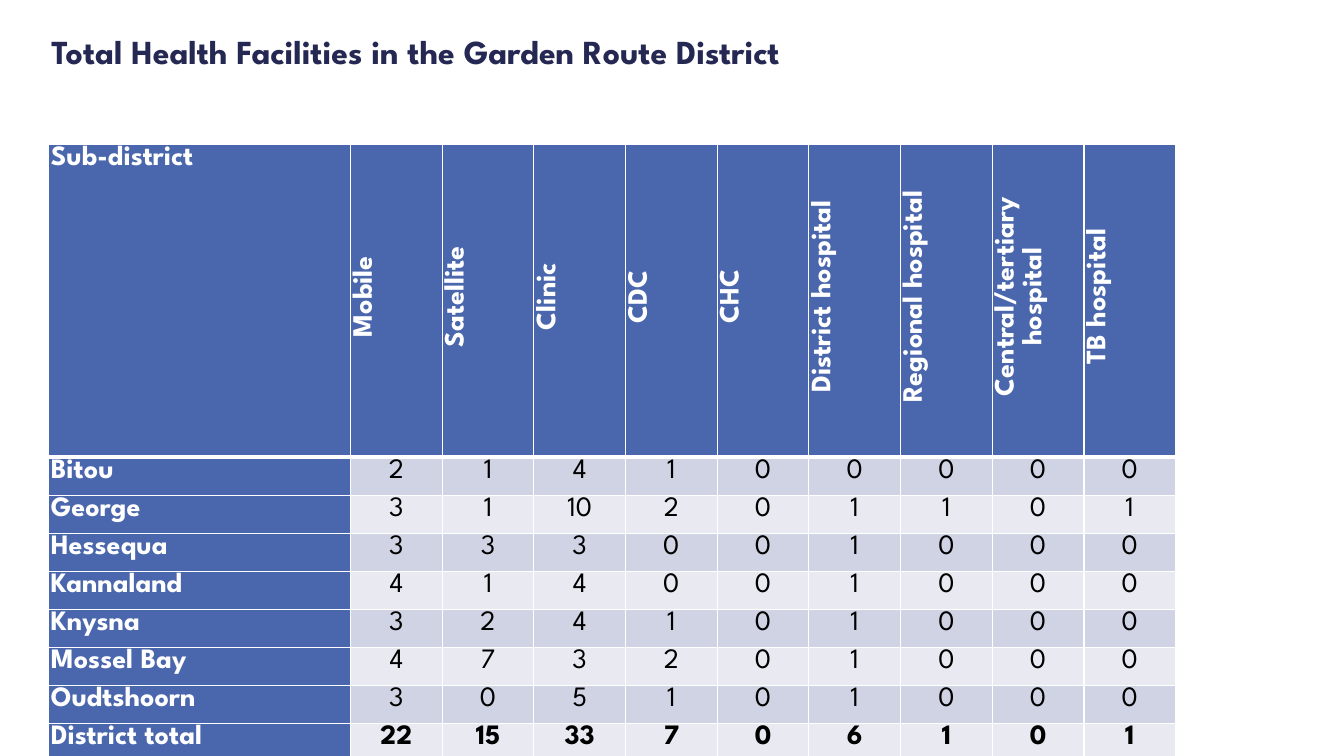
from lxml.etree import SubElement
from pptx import Presentation
from pptx.dml.color import RGBColor
from pptx.enum.text import MSO_ANCHOR as Anchor, PP_ALIGN as Align
from pptx.oxml import parse_xml
from pptx.oxml.ns import nsdecls, qn
from pptx.util import Pt

FONT = "League Spartan"
COLORS = {
    "navy": "242852",
    "blue": "4A66AC",
    "dark band": "D0D3E3",
    "light band": "E9EAF1",
    "white": "FFFFFF",
    "black": "000000",
}
FACILITIES = [
    "Sub-district", "Mobile", "Satellite", "Clinic", "CDC", "CHC", "District hospital",
    "Regional hospital", "Central/tertiary hospital", "TB hospital",
]
COUNTS = {
    "Bitou": [2, 1, 4, 1, 0, 0, 0, 0, 0],
    "George": [3, 1, 10, 2, 0, 1, 1, 0, 1],
    "Hessequa": [3, 3, 3, 0, 0, 1, 0, 0, 0],
    "Kannaland": [4, 1, 4, 0, 0, 1, 0, 0, 0],
    "Knysna": [3, 2, 4, 1, 0, 1, 0, 0, 0],
    "Mossel Bay": [4, 7, 3, 2, 0, 1, 0, 0, 0],
    "Oudtshoorn": [3, 0, 5, 1, 0, 1, 0, 0, 0],
    "District total": [22, 15, 33, 7, 0, 6, 1, 0, 1],
}
FIRST_WIDE_INSET_COLUMN = 7


def write_text(frame, text, size=20, color="white", bold=True, align=Align.LEFT,
               line_spacing=1.07, space_after=2):
    """Write one formatted paragraph into a text frame and return it."""
    paragraph = frame.paragraphs[0]
    paragraph.alignment = align
    paragraph.line_spacing = line_spacing
    paragraph.space_before = Pt(0)
    paragraph.space_after = Pt(space_after)
    run = paragraph.add_run()
    run.text = text
    run.font.name = FONT
    run.font.size = Pt(size)
    run.font.bold = bold
    run.font.color.rgb = RGBColor.from_string(COLORS[color])
    return paragraph


def draw_borders(cell, top=1, bottom=1):
    """Give a cell white borders, with top and bottom widths in points."""
    widths = {"lnL": 1, "lnR": 1, "lnT": top, "lnB": bottom}
    properties = cell._tc.get_or_add_tcPr()
    for position, (side, width) in enumerate(widths.items()):
        border = parse_xml(f'<a:{side} {nsdecls("a")} w="{Pt(width)}"/>')
        fill = SubElement(border, qn("a:solidFill"))
        SubElement(fill, qn("a:srgbClr"), val=COLORS["white"])
        properties.insert(position, border)


def style_cell(cell, fill, inset, top=1, bottom=1):
    """Set the fill, margins and borders of a cell."""
    cell.fill.solid()
    cell.fill.fore_color.rgb = RGBColor.from_string(COLORS[fill])
    cell.margin_left = cell.margin_right = Pt(inset)
    cell.margin_top = cell.margin_bottom = Pt(0)
    draw_borders(cell, top, bottom)


def turn_heading(cell, paragraph):
    """Turn a column heading to read upwards."""
    cell.vertical_anchor = Anchor.MIDDLE
    cell._tc.get_or_add_tcPr().set("vert", "vert270")
    paragraph._p.get_or_add_pPr().set("marL", str(Pt(5.65)))


def add_title(slide, text):
    """Place and fill the slide title."""
    title = slide.shapes.title
    title.left, title.top, title.width, title.height = Pt(31), Pt(14.5), Pt(903), Pt(44)
    frame = title.text_frame
    frame.word_wrap = False
    frame.vertical_anchor = Anchor.MIDDLE
    frame.margin_left = frame.margin_right = Pt(5.65)
    frame.margin_top = frame.margin_bottom = Pt(5.65)
    write_text(frame, text, size=24, color="navy", line_spacing=1.0, space_after=0)


def add_facility_table(slide):
    """Add the table of facilities by sub-district."""
    rows = [FACILITIES] + [[name, *counts] for name, counts in COUNTS.items()]
    table = slide.shapes.add_table(
        len(rows), len(FACILITIES), Pt(34.9), Pt(103), Pt(805), Pt(407)).table
    for index, column in enumerate(table.columns):
        column.width = Pt(65.5 if index else 215.5)
    for index, row in enumerate(table.rows):
        row.height = Pt(27.2 if index else 189.5)

    for r, values in enumerate(rows):
        for c, value in enumerate(values):
            cell = table.cell(r, c)
            heading = r == 0 or c == 0
            band = "dark band" if r % 2 else "light band"
            style_cell(cell, "blue" if heading else band,
                       inset=5 if c >= FIRST_WIDE_INSET_COLUMN else 1.4,
                       top=3 if r == 1 else 1, bottom=1 if r else 3)
            paragraph = write_text(
                cell.text_frame, str(value),
                color="white" if heading else "black",
                bold=heading or r == len(rows) - 1,
                align=Align.CENTER if c else Align.LEFT)
            if r == 0 and c:
                turn_heading(cell, paragraph)


def main():
    """Build and save the slide."""
    deck = Presentation()
    deck.slide_width, deck.slide_height = Pt(960), Pt(540)
    slide = deck.slides.add_slide(deck.slide_layouts[5])
    add_title(slide, "Total Health Facilities in the Garden Route District")
    add_facility_table(slide)
    deck.save("out.pptx")


if __name__ == "__main__":
    main()
